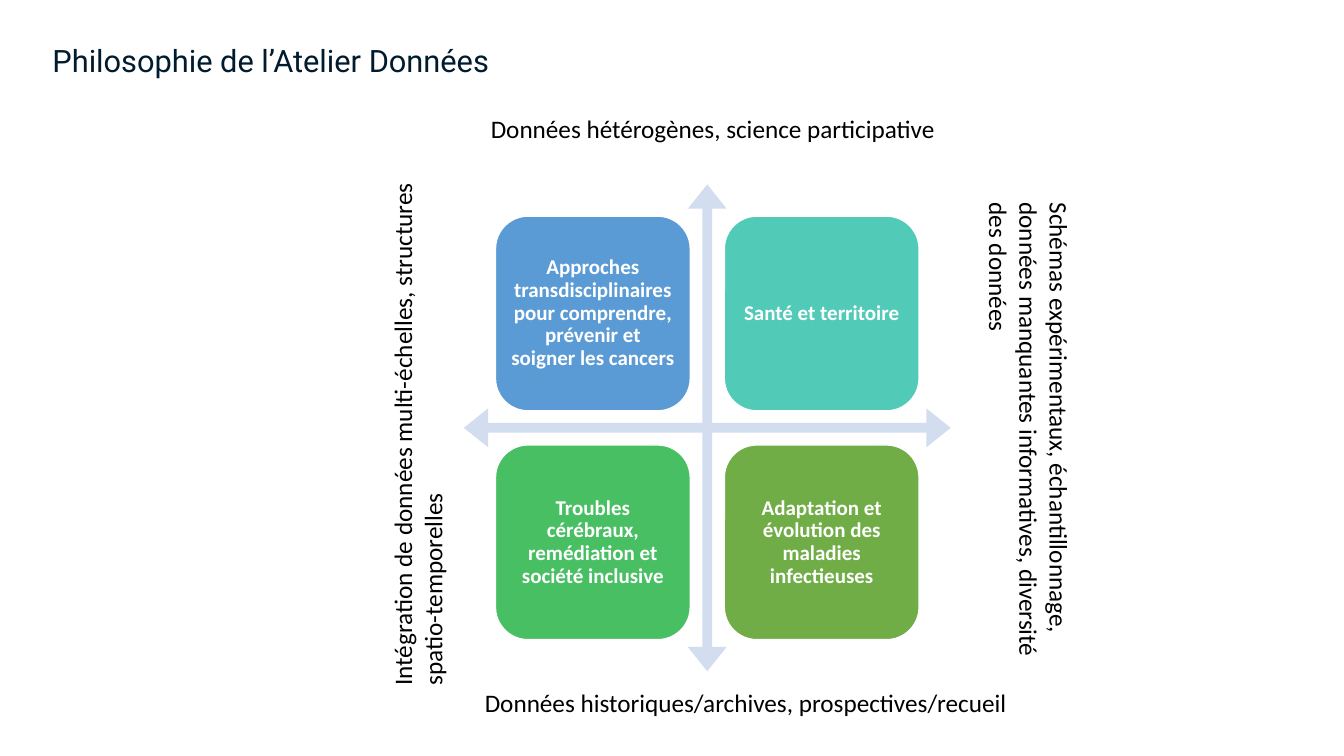
from dataclasses import dataclass

from pptx import Presentation
from pptx.dml.color import RGBColor
from pptx.enum.shapes import MSO_SHAPE
from pptx.enum.text import MSO_ANCHOR, PP_ALIGN
from pptx.util import Inches, Pt

QUAD_ARROW = MSO_SHAPE.QUAD_ARROW
ROUNDED = MSO_SHAPE.ROUNDED_RECTANGLE
TOP, MIDDLE = MSO_ANCHOR.TOP, MSO_ANCHOR.MIDDLE
LEFT, CENTER = PP_ALIGN.LEFT, PP_ALIGN.CENTER


@dataclass(frozen=True)
class Theme:
    """Fonts, type sizes and colours of the slide."""
    title_font: str = "Roboto"
    body_font: str = "Calibri"
    title_size: int = 22
    label_size: int = 18
    tile_size: int = 15
    title: str = "001B2E"
    label: str = "000000"
    white: str = "FFFFFF"
    arrow: str = "D2DEEF"


THEME = Theme()
WIDTH, HEIGHT = Inches(13.33), Inches(7.5)

TITLE = "Philosophie de l’Atelier Données"
TITLE_BOX = (3.15, 4.8, 53.04, 6.27)
MATRIX_BOX = (34.51, 24.4, 36.23, 64.4)
TILES = [
    ("Approches transdisciplinaires pour comprendre, prévenir et soigner les cancers", "5B9BD5"),
    ("Santé et territoire", "52CAB8"),
    ("Troubles cérébraux, remédiation et société inclusive", "49BF64"),
    ("Adaptation et évolution des maladies infectieuses", "70AD47"),
]
AXIS_LABELS = [
    ("Schémas expérimentaux, échantillonnage, données manquantes informatives, "
     "diversité des données", (57.84, 52, 37.43, 13.47), 90),
    ("Intégration de données multi-échelles, structures spatio-temporelles",
     (11.25, 52, 39.68, 9.47), 270),
    ("Données hétérogènes, science participative", (35.78, 14.27, 35.78, 5.33), 0),
    ("Données historiques/archives, prospectives/recueil", (35.33, 90.27, 41.79, 5.33), 0),
]


def to_emu(box):
    """Turn a box in percent of the slide into lengths."""
    x, y, w, h = box
    return (int(WIDTH * x / 100), int(HEIGHT * y / 100),
            int(WIDTH * w / 100), int(HEIGHT * h / 100))


def write(sp, text, font, size, color, bold=False, align=LEFT, anchor=TOP):
    """Set and format the single paragraph of a shape."""
    tf = sp.text_frame
    tf.text = text
    tf.word_wrap = True
    tf.vertical_anchor = anchor
    p = tf.paragraphs[0]
    p.alignment = align
    f = p.runs[0].font
    f.name, f.size, f.bold = font, Pt(size), bold
    f.color.rgb = RGBColor.from_string(color)


def add_filled(s, kind, box, color):
    """Add a preset shape with a plain fill and no shadow."""
    sp = s.shapes.add_shape(kind, *box)
    sp.shadow.inherit = False
    sp.fill.solid()
    sp.fill.fore_color.rgb = RGBColor.from_string(color)
    sp.line.fill.background()
    return sp


def add_title(s, box):
    """Place the title placeholder in its box."""
    sp = s.shapes.title
    sp.left, sp.top, sp.width, sp.height = to_emu(box)
    write(sp, TITLE, THEME.title_font, THEME.title_size, THEME.title)


def add_tile(s, box, text, color):
    """Add one rounded theme tile with centred text."""
    sp = add_filled(s, ROUNDED, box, color)
    sp.line.color.rgb = RGBColor.from_string(THEME.white)
    sp.line.width = Pt(1)
    tf = sp.text_frame
    tf.margin_left = tf.margin_right = tf.margin_top = tf.margin_bottom = Inches(0.06)
    write(sp, text, THEME.body_font, THEME.tile_size, THEME.white, True, CENTER, MIDDLE)
    tf.paragraphs[0].line_spacing = 0.9


def add_matrix(s, box):
    """Draw the four-way arrow and the two by two tiles inside a box."""
    x, y, w, h = to_emu(box)
    arrow = add_filled(s, QUAD_ARROW, (x, y, w, h), THEME.arrow)
    for i, share in enumerate((0.02, 0.04, 0.05)):
        arrow.adjustments[i] = share
    margin, pitch, side = 0.065, 0.47, 0.4
    for i, (text, color) in enumerate(TILES):
        row, col = divmod(i, 2)
        tile_box = (int(x + w * (margin + col * pitch)), int(y + h * (margin + row * pitch)),
                    int(w * side), int(h * side))
        add_tile(s, tile_box, text, color)


def add_axis_label(s, text, box, rotation):
    """Add a label at one end of an axis."""
    sp = s.shapes.add_textbox(*to_emu(box))
    sp.rotation = rotation
    write(sp, text, THEME.body_font, THEME.label_size, THEME.label)


def main():
    """Build and save the slide."""
    prs = Presentation()
    prs.slide_width, prs.slide_height = WIDTH, HEIGHT
    s = prs.slides.add_slide(prs.slide_layouts[5])
    add_title(s, TITLE_BOX)
    add_matrix(s, MATRIX_BOX)
    for text, box, rotation in AXIS_LABELS:
        add_axis_label(s, text, box, rotation)
    prs.save("out.pptx")


if __name__ == "__main__":
    main()
